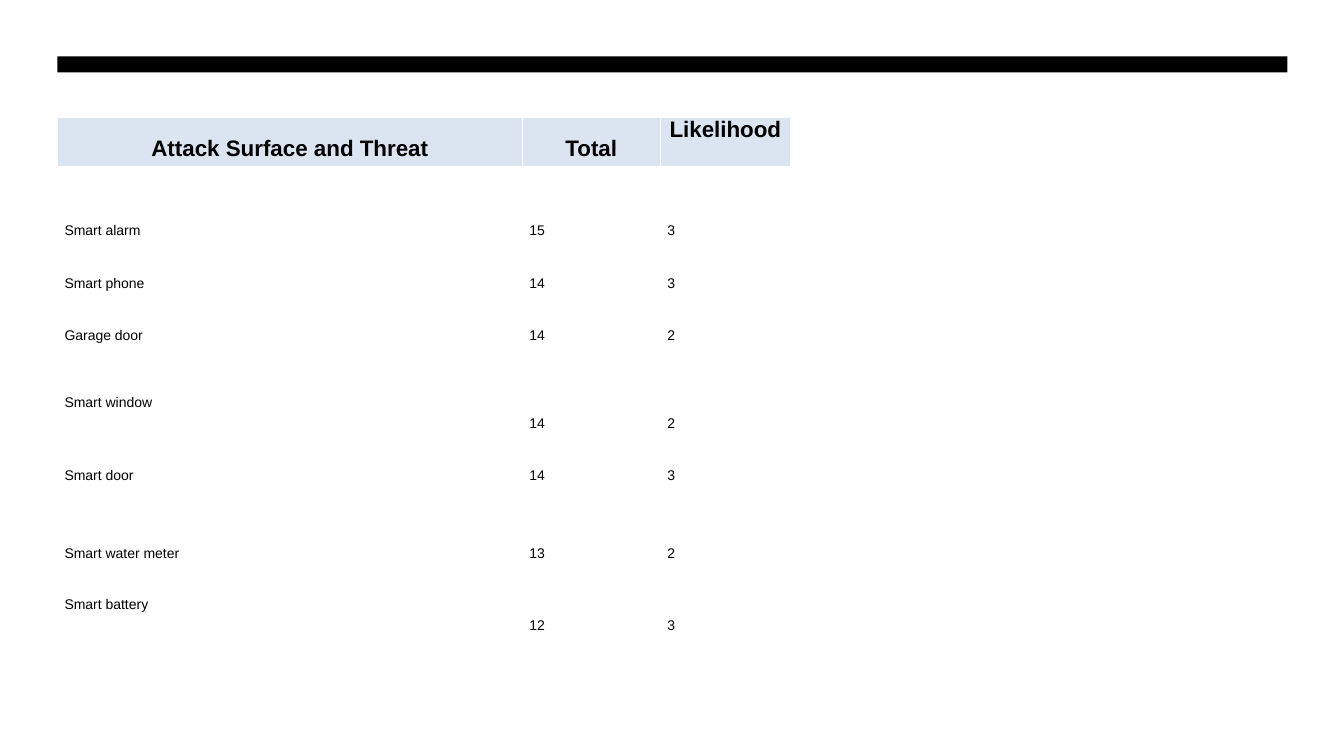
from lxml import etree
from pptx import Presentation
from pptx.dml.color import RGBColor
from pptx.enum.shapes import MSO_SHAPE as SHAPE
from pptx.enum.text import MSO_ANCHOR as ANCHOR, PP_ALIGN as ALIGN
from pptx.oxml.ns import qn
from pptx.util import Inches, Pt

HEADER = ("Attack Surface and Threat", "Total", "Likelihood")
THREATS = [
    ("Smart alarm", "15", "3"),
    ("Smart phone", "14", "3"),
    ("Garage door", "14", "2"),
    ("Smart window", "14", "2"),
    ("Smart door", "14", "3"),
    ("Smart water meter", "13", "2"),
    ("Smart battery", "12", "3"),
]
COL_WIDTHS = (4.61, 1.37, 1.29)
ROW_HEIGHTS = (0.48, 0.77, 0.52, 0.52, 0.87, 0.52, 0.77, 0.72)
RAISED_NAMES = ("Smart window", "Smart battery")
LEFT, TABLE_TOP = 0.57, 1.17
BLACK, WHITE, PALE_BLUE = "000000", "FFFFFF", "DBE5F1"


def color(hex_code):
    return RGBColor.from_string(hex_code)


def add_bar(slide):
    sp = slide.shapes.add_shape(SHAPE.RECTANGLE, Inches(LEFT), Inches(0.56),
                                Inches(12.2), Inches(0.16))
    sp.shadow.inherit = False
    sp.fill.solid()
    sp.fill.fore_color.rgb = color(BLACK)
    sp.line.fill.background()


def set_borders(cell):
    tc_pr = cell._tc.get_or_add_tcPr()
    for i, side in enumerate(("a:lnL", "a:lnR", "a:lnT", "a:lnB")):
        ln = etree.Element(qn(side), w=str(Pt(0.75)))
        fill = etree.SubElement(ln, qn("a:solidFill"))
        etree.SubElement(fill, qn("a:srgbClr"), val=WHITE)
        tc_pr.insert(i, ln)


def fill_cell(cell, text, is_header):
    cell.margin_left = cell.margin_right = Inches(0.07)
    cell.margin_top = Inches(0.05)
    cell.margin_bottom = Inches(0.26 if text in RAISED_NAMES else 0.05)
    cell.vertical_anchor = ANCHOR.TOP if text == HEADER[-1] else ANCHOR.BOTTOM
    if is_header:
        cell.fill.solid()
        cell.fill.fore_color.rgb = color(PALE_BLUE)
    else:
        cell.fill.background()
    set_borders(cell)
    p = cell.text_frame.paragraphs[0]
    p.text = text
    p.alignment = ALIGN.CENTER if is_header else ALIGN.LEFT
    p.line_spacing = Pt(13.8 if is_header else 12)
    p.space_before = p.space_after = Pt(6 if is_header else 3)
    font = p.runs[0].font
    font.name = "Arial"
    font.size = Pt(16 if is_header else 10)
    font.bold = is_header
    font.color.rgb = color(BLACK)


def add_threat_table(slide):
    rows = [HEADER] + THREATS
    table = slide.shapes.add_table(
        len(rows), len(HEADER), Inches(LEFT), Inches(TABLE_TOP),
        Inches(sum(COL_WIDTHS)), Inches(sum(ROW_HEIGHTS))).table
    table.first_row = table.horz_banding = False
    for column, width in zip(table.columns, COL_WIDTHS):
        column.width = Inches(width)
    for r, (values, height) in enumerate(zip(rows, ROW_HEIGHTS)):
        table.rows[r].height = Inches(height)
        for c, text in enumerate(values):
            fill_cell(table.cell(r, c), text, r == 0)


def main():
    """Build the slide of smart home threats with totals and likelihoods."""
    prs = Presentation()
    prs.slide_width, prs.slide_height = Inches(13.33), Inches(7.5)
    slide = prs.slides.add_slide(prs.slide_layouts[6])
    add_bar(slide)
    add_threat_table(slide)
    prs.save("out.pptx")


if __name__ == "__main__":
    main()
